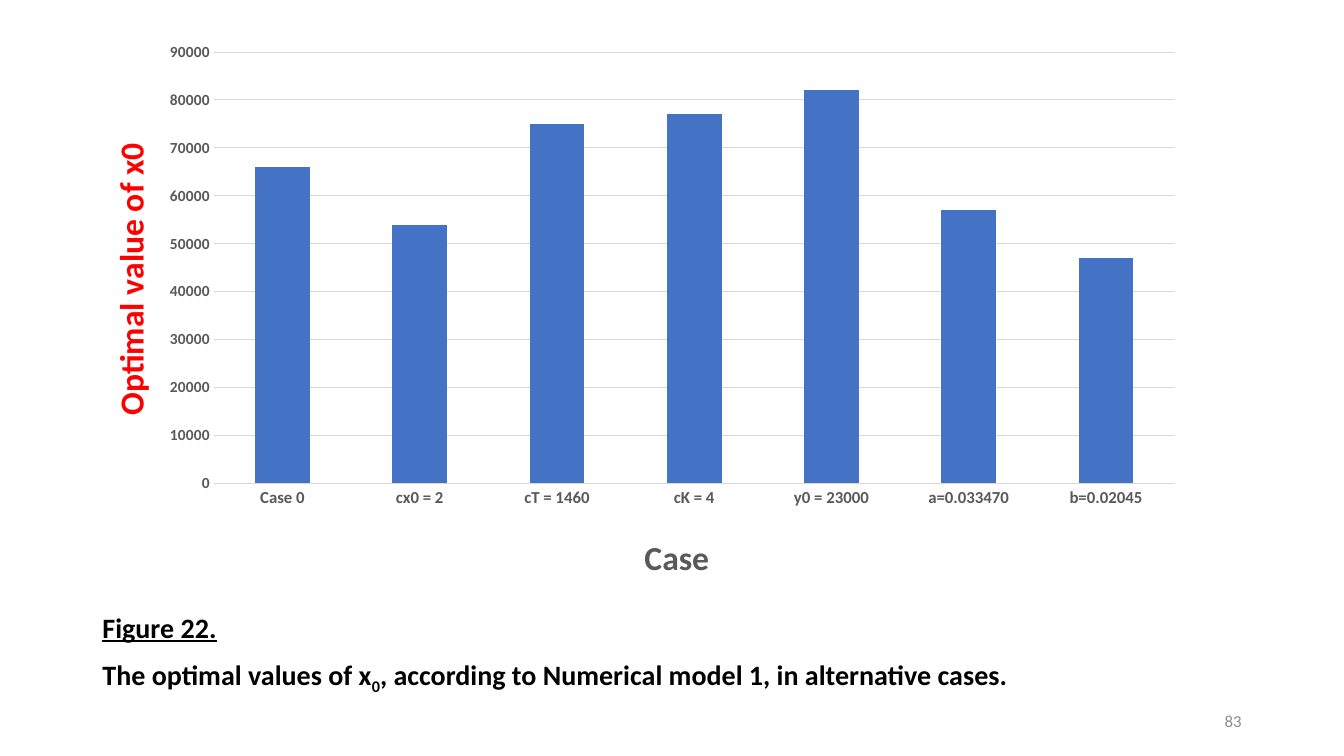
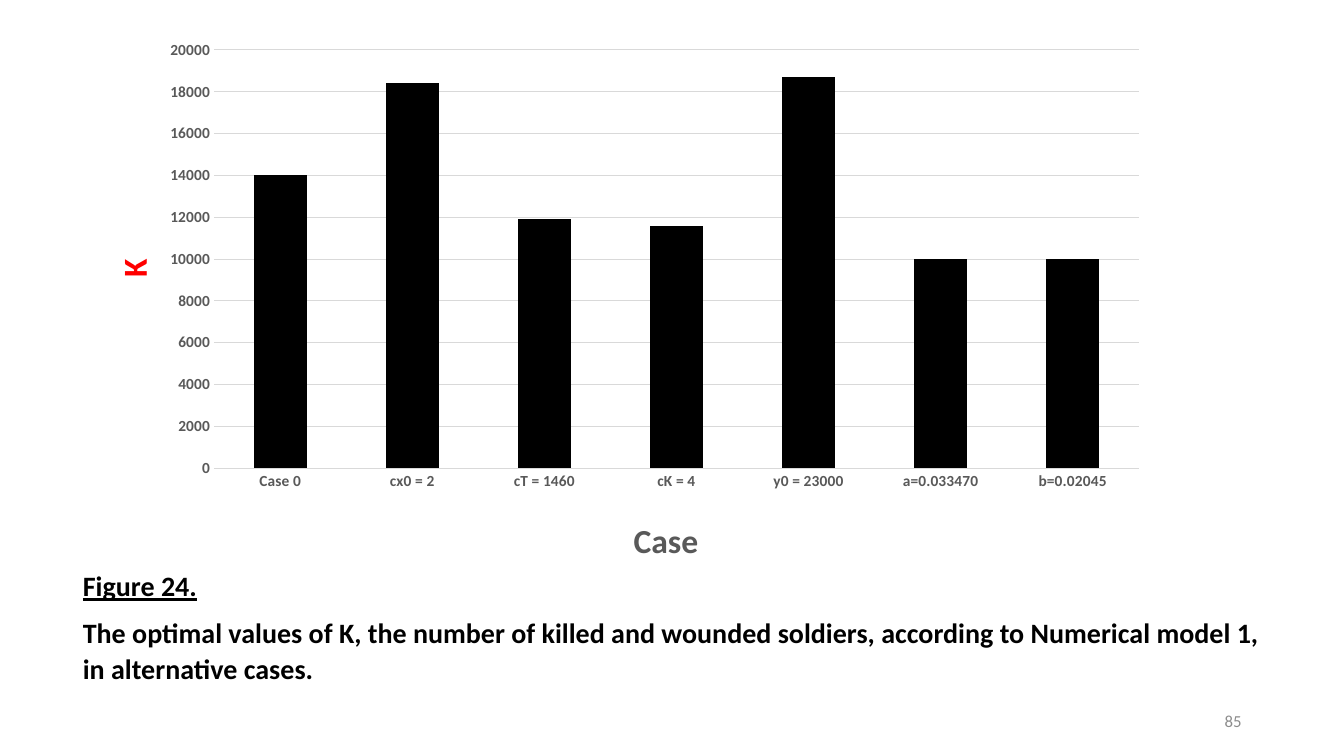
"""Builds two slides that each show a column chart of cases with a figure caption."""
from lxml.etree import SubElement
from pptx import Presentation
from pptx.chart.data import CategoryChartData
from pptx.dml.color import RGBColor
from pptx.enum.chart import XL_CHART_TYPE, XL_TICK_MARK
from pptx.enum.text import MSO_ANCHOR, MSO_AUTO_SIZE, PP_ALIGN
from pptx.oxml.ns import qn
from pptx.util import Pt

FONT = "Calibri"
BLACK, GRAY, RED = "000000", "595959", "FF0000"
GRID, PAGE_GRAY, BLUE = "D9D9D9", "8C8C8C", "4472C4"
PAGE_BOX = (678, 500, 216, 29)
CASES = ["Case 0", "cx0 = 2", "cT = 1460", "cK = 4", "y0 = 23000", "a=0.033470", "b=0.02045"]

FIGURES = [
    {
        "page": "83",
        "label": "Figure 22.",
        "caption": [("The optimal values of x", 0), ("0", -25),
                    (", according to Numerical model 1, in alternative cases.", 0)],
        "caption_box": (66, 430.5, 769, 66),
        "chart_box": (57, 21, 798, 405.5),
        "plot": {"x": 0.12, "y": 0.04, "w": 0.86, "h": 0.76},
        "case_title": {"x": 0.5, "y": 0.88},
        "value_title": {"x": 0.02, "y": 0.19},
        "quantity": "Optimal value of x0",
        "values": [66000, 54000, 75000, 77000, 82000, 57000, 47000],
        "top": 90000, "step": 10000, "color": BLUE, "case_size": 12,
    },
    {
        "page": "85",
        "label": "Figure 24.",
        "caption": [("The optimal values of K, the number of killed and wounded soldiers, "
                     "according to Numerical model 1, in alternative cases.", 0)],
        "caption_box": (52, 401, 861, 92),
        "chart_box": (52, 20, 777, 393),
        "plot": {"x": 0.13, "y": 0.04, "w": 0.85, "h": 0.76},
        "case_title": {"x": 0.51, "y": 0.88},
        "value_title": {"x": 0.03, "y": 0.41},
        "quantity": "K",
        "values": [14000, 18400, 11900, 11600, 18700, 10000, 10000],
        "top": 20000, "step": 2000, "color": BLACK, "case_size": 11,
    },
]


def rgb(color):
    return RGBColor.from_string(color)


def set_font(font, size, color, bold=True, underline=False):
    font.name, font.size, font.bold = FONT, Pt(size), bold
    font.color.rgb = rgb(color)
    if underline:
        font.underline = True


def write(paragraph, text, baseline=0, **style):
    run = paragraph.add_run()
    run.text = text
    set_font(run.font, **style)
    if baseline:
        run._r.get_or_add_rPr().set("baseline", str(baseline * 1000))


def place(element, index, fractions, inner=False):
    """Fix a chart part at the given fractions of the chart area."""
    for automatic in element.findall(qn("c:layout")):
        element.remove(automatic)
    layout = SubElement(element, qn("c:layout"))
    element.insert(index, layout)
    manual = SubElement(layout, qn("c:manualLayout"))
    settings = [("layoutTarget", "inner")] if inner else []
    settings += [("xMode", "edge"), ("yMode", "edge"), *fractions.items()]
    for tag, value in settings:
        SubElement(manual, qn(f"c:{tag}")).set("val", str(value))


def format_axis(axis, title, color, position, size, turn):
    axis.major_tick_mark = axis.minor_tick_mark = XL_TICK_MARK.NONE
    set_font(axis.tick_labels.font, size, GRAY)
    frame = axis.axis_title.text_frame
    write(frame.paragraphs[0], title, size=24, color=color)
    frame._txBody.bodyPr.set("rot", str(turn * 60000))
    place(axis.axis_title._element, 1, position)


def add_figure_chart(slide, figure):
    data = CategoryChartData()
    data.categories = CASES
    data.add_series("Series 1", figure["values"])
    chart = slide.shapes.add_chart(
        XL_CHART_TYPE.COLUMN_STACKED, *map(Pt, figure["chart_box"]), data).chart
    chart.has_title = chart.has_legend = False
    set_font(chart.font, 10, BLACK, bold=False)

    plot = chart.plots[0]
    plot.gap_width, plot.overlap, plot.vary_by_categories = 150, 100, False
    columns = plot.series[0].format
    columns.fill.solid()
    columns.fill.fore_color.rgb = rgb(figure["color"])

    cases, values = chart.category_axis, chart.value_axis
    format_axis(cases, "Case", GRAY, figure["case_title"], figure["case_size"], 0)
    format_axis(values, figure["quantity"], RED, figure["value_title"], 11, -90)
    values.minimum_scale, values.maximum_scale = 0, figure["top"]
    values.major_unit = figure["step"]
    values.format.line.fill.background()
    for line in (cases.format.line, values.major_gridlines.format.line):
        line.width = Pt(0.75)
        line.color.rgb = rgb(GRID)
    place(chart._chartSpace.chart.plotArea, 0, figure["plot"], inner=True)


def add_caption(slide, figure):
    caption = slide.shapes.title
    caption.left, caption.top, caption.width, caption.height = map(Pt, figure["caption_box"])
    frame = caption.text_frame
    frame.word_wrap, frame.auto_size = True, MSO_AUTO_SIZE.NONE
    frame.vertical_anchor = MSO_ANCHOR.TOP
    label, description = frame.paragraphs[0], frame.add_paragraph()
    for paragraph in (label, description):
        paragraph.alignment = PP_ALIGN.LEFT
        paragraph.line_spacing, paragraph.space_after = 1.07, Pt(8)
        paragraph.space_before = Pt(0)
    write(label, figure["label"], size=20, color=BLACK, underline=True)
    for text, baseline in figure["caption"]:
        write(description, text, baseline, size=20, color=BLACK)


def add_page_number(slide, number):
    frame = slide.shapes.add_textbox(*map(Pt, PAGE_BOX)).text_frame
    frame.word_wrap, frame.vertical_anchor = True, MSO_ANCHOR.MIDDLE
    frame.paragraphs[0].alignment = PP_ALIGN.RIGHT
    write(frame.paragraphs[0], number, size=12, color=PAGE_GRAY, bold=False)


def main():
    deck = Presentation()
    deck.slide_width, deck.slide_height = Pt(960), Pt(540)
    for figure in FIGURES:
        slide = deck.slides.add_slide(deck.slide_layouts[5])
        add_page_number(slide, figure["page"])
        add_figure_chart(slide, figure)
        add_caption(slide, figure)
    deck.save("out.pptx")


if __name__ == "__main__":
    main()
